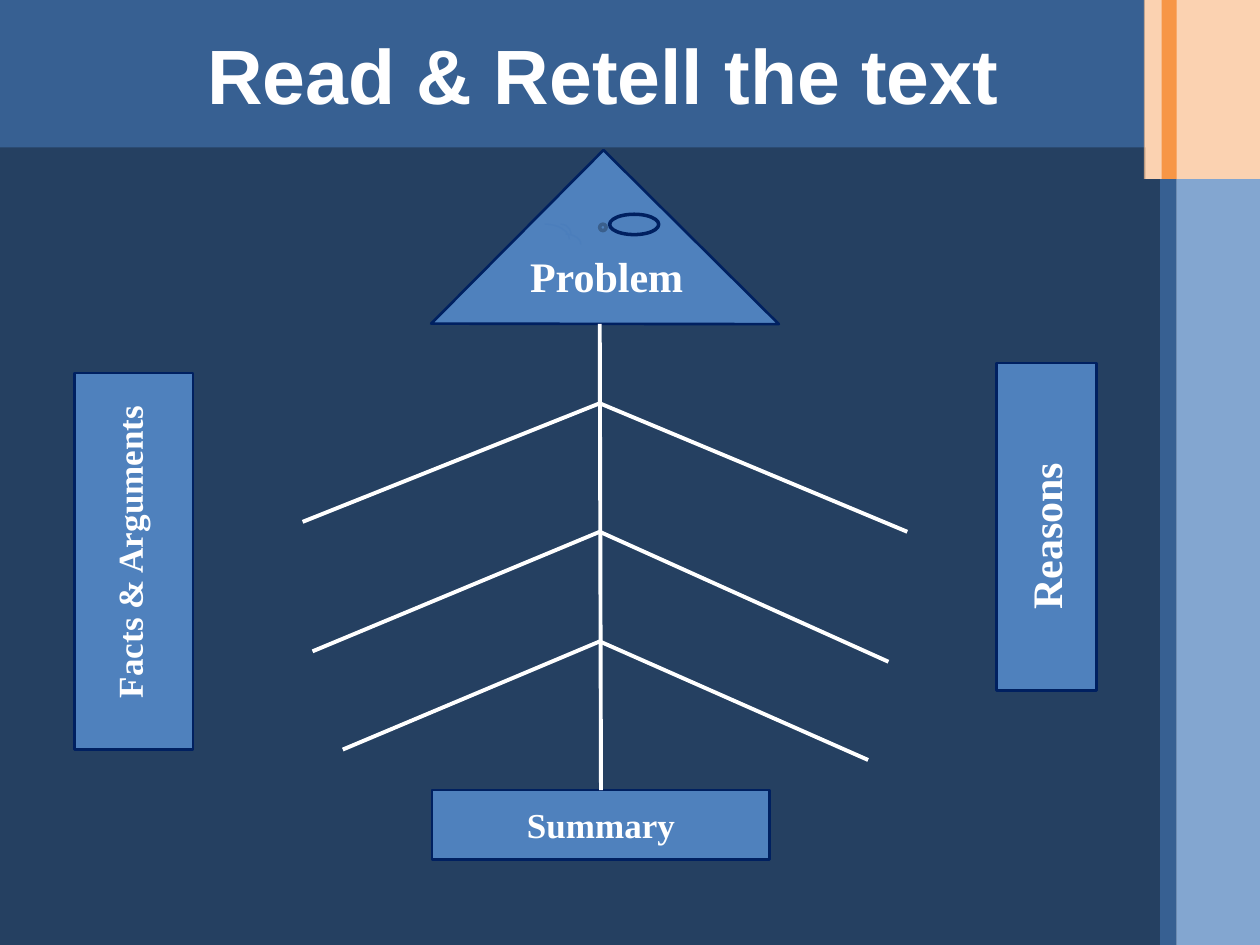
from lxml import etree
from pptx import Presentation
from pptx import util as u
from pptx.dml.color import RGBColor
from pptx.enum import shapes, text
from pptx.oxml.ns import qn


class Theme:
    navy, steel, blue = "254061", "376092", "4F81BD"
    peach, orange, white = "FAC090", "F79646", "FFFFFF"
    edge, ring, curl = "002060", "3A5F8C", "4B7EBC"
    sans, serif = "Arial", "Times New Roman"
    head, large, small = u.Pt(44), u.Pt(24), u.Pt(20)


KIND = shapes.MSO_SHAPE


def draw(kind, box, fill=None, edge=None, width=1.5, alpha=None):
    """Add a preset shape; box is left, top, width, height in cm."""
    shape = slide.shapes.add_shape(kind, *map(u.Cm, box))
    shape.shadow.inherit = False
    if fill:
        shape.fill.solid()
        shape.fill.fore_color.rgb = RGBColor.from_string(fill)
    else:
        shape.fill.background()
    if edge:
        shape.line.color.rgb = RGBColor.from_string(edge)
        shape.line.width = u.Pt(width)
    else:
        shape.line.fill.background()
    if alpha:
        tint = shape.element.spPr.find(qn("a:solidFill"))[0]
        etree.SubElement(tint, qn("a:alpha")).set("val", str(alpha * 1000))
    return shape


def write(shape, words, size, name=Theme.serif, align=text.PP_ALIGN.CENTER):
    """Put one bold white line of text in a shape."""
    para = shape.text_frame.paragraphs[0]
    para.text = words
    para.alignment = align
    style = {"size": size, "name": name, "bold": True}
    for key, value in style.items():
        setattr(para.font, key, value)
    para.font.color.rgb = RGBColor.from_string(Theme.white)


deck = Presentation()
deck.slide_width, deck.slide_height = u.Cm(25.4), u.Cm(19.05)
slide = deck.slides.add_slide(deck.slide_layouts[5])

# Backdrop: header, body and side bands
bands = [
    ((-0.03, 0, 23.11, 3.05), Theme.steel, None),
    ((0, 2.97, 23.09, 16.08), Theme.navy, None),
    ((22.94, 3.61, 0.46, 15.44), Theme.navy, None),
    ((23.06, 0, 2.34, 3.61), Theme.peach, 70),
    ((23.72, 3.61, 1.68, 15.44), Theme.blue, 70),
    ((23.39, 3.61, 0.33, 15.44), Theme.steel, None),
    ((23.42, 0, 0.3, 3.61), Theme.orange, None),
]
for box, fill, alpha in bands:
    draw(KIND.RECTANGLE, box, fill, alpha=alpha)

# Title, raised above the header band
title = slide.shapes.title
title.element.getparent().append(title.element)
place = {"left": 1.27, "top": 0, "width": 21.79, "height": 2.97}
for key, value in place.items():
    setattr(title, key, u.Cm(value))
title.text_frame.vertical_anchor = text.MSO_ANCHOR.MIDDLE
write(title, "Read & Retell the text", Theme.head, Theme.sans)

# Fish head, tail and side panels
head = draw(KIND.RIGHT_TRIANGLE, (9.73, 4.04, 4.93, 4.98), Theme.blue, Theme.edge)
head.rotation = 134.8
tail = draw(KIND.RECTANGLE, (8.71, 15.93, 6.81, 1.4), Theme.blue, Theme.edge)
tail.text_frame.vertical_anchor = text.MSO_ANCHOR.MIDDLE
write(tail, "Summary", Theme.small)
for box in [(20.09, 7.32, 2.01, 6.6), (1.5, 7.52, 2.39, 7.59)]:
    draw(KIND.RECTANGLE, box, Theme.blue, Theme.edge)

# Spine and ribs: each joint on the spine has a left and a right rib
mid = 12.09
ribs = [
    (8.13, (6.1, 10.52), (18.29, 10.72)),
    (10.72, (6.3, 13.13), (17.91, 13.34)),
    (12.93, (6.91, 15.11), (17.5, 15.32)),
]
bones = [(mid, 6.53, 12.12, 15.93)]
bones += [(mid, joint, *tip) for joint, *tips in ribs for tip in tips]
lines = []
for ends in bones:
    line = slide.shapes.add_connector(
        shapes.MSO_CONNECTOR.STRAIGHT, *map(u.Cm, ends))
    line.line.color.rgb = RGBColor.from_string(Theme.white)
    line.line.width = u.Pt(2.25)
    etree.SubElement(line.element.spPr, qn("a:effectLst"))
    lines.append(line)
lines[0].end_connect(tail, 0)

# Eye and gill marks on the head
draw(KIND.OVAL, (mid, 4.52, 0.13, 0.13), Theme.blue, Theme.ring, 2)
draw(KIND.OVAL, (12.29, 4.32, 0.99, 0.41), Theme.blue, Theme.edge, 2)
for box in [(11.1, 4.52, 0.41, 0.41), (10.49, 4.52, 0.99, 0.61),
            (11.1, 4.72, 0.61, 0.41)]:
    draw(KIND.ARC, box, edge=Theme.curl, width=0.75)

# Labels: words, box, size, turn, alignment, left inset
mode = text.PP_ALIGN
labels = [
    ("Problem", (8.89, 4.93, 5.41, 1.27), Theme.large, 0, mode.CENTER, 1.52),
    ("Facts & Arguments", (-0.69, 10.46, 6.6, 1.12), Theme.small, 270, mode.LEFT, 0.25),
    ("Reasons", (18.47, 9.3, 5.21, 1.27), Theme.large, 270, mode.LEFT, 0.25),
]
for words, box, size, turn, align, inset in labels:
    label = slide.shapes.add_textbox(*map(u.Cm, box))
    label.rotation = turn
    frame = {"word_wrap": True, "margin_left": u.Cm(inset),
             "auto_size": text.MSO_AUTO_SIZE.SHAPE_TO_FIT_TEXT}
    for key, value in frame.items():
        setattr(label.text_frame, key, value)
    write(label, words, size, align=align)

deck.save("out.pptx")
